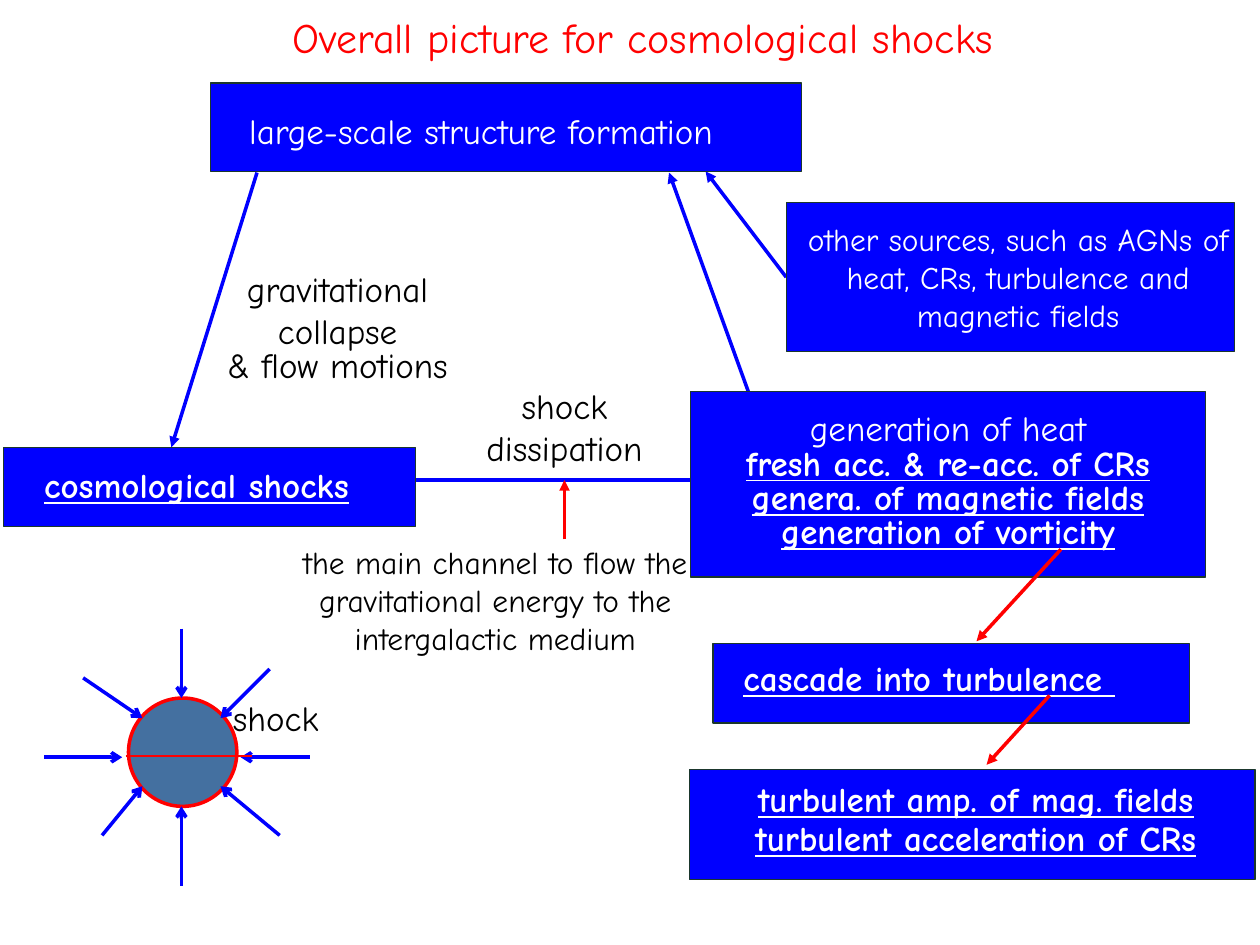
"""Build a slide charting how cosmological shocks feed energy into structure formation."""
from lxml.etree import SubElement
from pptx import Presentation
from pptx.dml.color import RGBColor
from pptx.enum.shapes import MSO_CONNECTOR, MSO_SHAPE
from pptx.enum.text import MSO_ANCHOR, PP_ALIGN
from pptx.oxml.ns import qn
from pptx.util import Inches, Pt

BLUE = RGBColor(0x00, 0x00, 0xFF)
RED = RGBColor(0xFF, 0x00, 0x00)
WHITE = RGBColor(0xFF, 0xFF, 0xFF)
BLACK = RGBColor(0x00, 0x00, 0x00)
EDGE = RGBColor(0x1B, 0x37, 0x2D)
STEEL = RGBColor(0x44, 0x70, 0xA0)
FONT = "Comic Neue"
LEFT, CENTER = PP_ALIGN.LEFT, PP_ALIGN.CENTER


def add_text(shapes, box, lines, color, size=20, align=CENTER, spacing=(), strong=(), inset=0.1):
    sp = shapes.add_textbox(*(Inches(v) for v in box))
    tf = sp.text_frame
    tf.word_wrap = True
    tf.margin_left = tf.margin_right = Inches(inset)
    tf.text = "\n".join(lines)
    for i, p in enumerate(tf.paragraphs):
        p.alignment = align
        if i:
            p.space_before = Pt(size / 2)
        if i in spacing:
            p.line_spacing = spacing[i]
        p.font.name, p.font.size, p.font.color.rgb = FONT, Pt(size), color
        if i in strong:
            p.font.bold = p.font.underline = True
    return tf


def add_arrow(shapes, start, end, color, head="triangle"):
    line = shapes.add_connector(MSO_CONNECTOR.STRAIGHT, *(Inches(v) for v in start + end))
    line.line.color.rgb = color
    line.line.width = Pt(2)
    SubElement(line.line._get_or_add_ln(), qn("a:tailEnd"), type=head)
    SubElement(line._element.spPr, qn("a:effectLst"))
    return line


prs = Presentation()
prs.slide_width, prs.slide_height = Inches(10), Inches(7.5)
s = prs.slides.add_slide(prs.slide_layouts[5])
shapes = s.shapes

title = shapes.title
title.left, title.top, title.width, title.height = (Inches(v) for v in (1.36, 0.04, 7.48, 0.51))
tf = title.text_frame
tf.text = "Overall picture for cosmological shocks"
tf.vertical_anchor = MSO_ANCHOR.TOP
p = tf.paragraphs[0]
p.alignment = CENTER
p.font.name, p.font.size, p.font.color.rgb = FONT, Pt(24), RED

add_arrow(shapes, (2.04, 1.37), (1.36, 3.55), BLUE)
add_arrow(shapes, (5.94, 3.11), (5.31, 1.37), BLUE)
add_arrow(shapes, (3.3, 3.81), (5.66, 3.81), BLUE)
source_arrow = add_arrow(shapes, (6.24, 2.2), (5.6, 1.36), BLUE)

boxes = {
    "sources": (6.24, 1.61, 3.56, 1.18),
    "structure": (1.67, 0.66, 4.69, 0.7),
    "shocks": (0.03, 3.55, 3.27, 0.63),
    "generation": (5.48, 3.11, 4.09, 1.47),
    "cascade": (5.66, 5.11, 3.78, 0.63),
    "turbulence": (5.47, 6.11, 4.49, 0.87),
}
rects = {}
for name, box in boxes.items():
    sp = shapes.add_shape(MSO_SHAPE.RECTANGLE, *(Inches(v) for v in box))
    sp.shadow.inherit = False
    sp.fill.solid()
    sp.fill.fore_color.rgb = BLUE
    sp.line.color.rgb = EDGE
    sp.line.width = Pt(0.75)
    rects[name] = sp
source_arrow.begin_connect(rects["sources"], 1)

add_text(shapes, (1.88, 0.82, 4.53, 0.44), ["large-scale structure formation"], WHITE, align=LEFT)
add_text(shapes, (6.25, 1.7, 3.66, 1.01),
         ["other sources, such as AGNs of heat, CRs, turbulence and magnetic fields"], WHITE, 18)
add_text(shapes, (0.35, 3.63, 2.88, 0.44), ["cosmological shocks"], WHITE,
         align=LEFT, strong=[0], inset=0)
tf = add_text(shapes, (5.48, 3.27, 4.09, 1.08),
              ["generation of heat", "fresh acc. & re-acc. of CRs",
               "genera. of magnetic fields", "generation of vorticity"],
              WHITE, spacing=dict.fromkeys(range(4), 0.4), strong=[1, 2, 3])
tf.vertical_anchor = MSO_ANCHOR.BOTTOM
tf.margin_top = tf.margin_bottom = 0
add_text(shapes, (5.9, 5.16, 3.45, 0.44), ["cascade into turbulence "], WHITE,
         align=LEFT, strong=[0], inset=0)
add_text(shapes, (5.62, 6.27, 4.25, 0.63),
         ["turbulent amp. of mag. fields", "turbulent acceleration of CRs"],
         WHITE, spacing={0: 0.5, 1: 0.5}, strong=[0, 1], inset=0)

add_text(shapes, (1.51, 2.07, 2.34, 1.04), ["gravitational collapse", "& flow motions"],
         BLACK, spacing={1: 0.3})
add_text(shapes, (3.54, 3, 1.88, 0.77), ["shock dissipation"], BLACK)
add_text(shapes, (2.12, 4.26, 3.62, 1.01),
         ["the main channel to flow the gravitational energy to the intergalactic medium"], BLACK, 18)

for start, end in [
    ((4.48, 4.28), (4.48, 3.81)),
    ((8.42, 4.36), (7.75, 5.09)),
    ((8.33, 5.52), (7.83, 6.07)),
]:
    add_arrow(shapes, start, end, RED)

diagram = shapes.add_group_shape().shapes
sp = diagram.add_shape(MSO_SHAPE.OVAL, Inches(1.02), Inches(5.54), Inches(0.86), Inches(0.86))
sp.shadow.inherit = False
sp.fill.solid()
sp.fill.fore_color.rgb = STEEL
sp.line.color.rgb = RED
sp.line.width = Pt(2)

inflows = [
    ((1.44, 4.99), (1.44, 5.54)), ((1.44, 7.03), (1.44, 6.4)),
    ((0.35, 6.01), (0.97, 6.01)), ((2.46, 6.01), (1.91, 6.01)),
    ((2.14, 5.31), (1.75, 5.7)), ((0.66, 5.38), (1.13, 5.7)),
    ((0.81, 6.63), (1.13, 6.24)), ((2.22, 6.63), (1.75, 6.24)),
]
for start, end in inflows:
    add_arrow(diagram, start, end, BLUE, "arrow")
add_text(diagram, (1.75, 5.54, 0.94, 0.37), ["shock"], BLACK, align=LEFT, spacing={0: 0.8})

filaments = [
    [(1.21, 5.7), (1.23, 5.76), (1.26, 5.83), (1.29, 5.84), (1.33, 5.87), (1.4, 5.88),
     (1.48, 5.86), (1.52, 5.84), (1.58, 5.82), (1.63, 5.82), (1.67, 5.83), (1.71, 5.89), (1.73, 5.93)],
    [(1.36, 5.93), (1.31, 5.98), (1.26, 5.99), (1.23, 6.01), (1.21, 6.05), (1.21, 6.08),
     (1.23, 6.12), (1.26, 6.18), (1.31, 6.21), (1.33, 6.25), (1.31, 6.28), (1.29, 6.29), (1.26, 6.3)],
    [(1.44, 6.19), (1.48, 6.18), (1.56, 6.17), (1.62, 6.15), (1.64, 6.12), (1.65, 6.08),
     (1.68, 6.03), (1.71, 6.01), (1.75, 6.01)],
]
for points in filaments:
    builder = diagram.build_freeform(*points[0], scale=Inches(1))
    builder.add_line_segments(points[1:], close=False)
    sp = builder.convert_to_shape()
    sp.shadow.inherit = False
    sp.fill.background()
    sp.line.color.rgb = RED
    sp.line.width = Pt(1.5)

prs.save("out.pptx")
